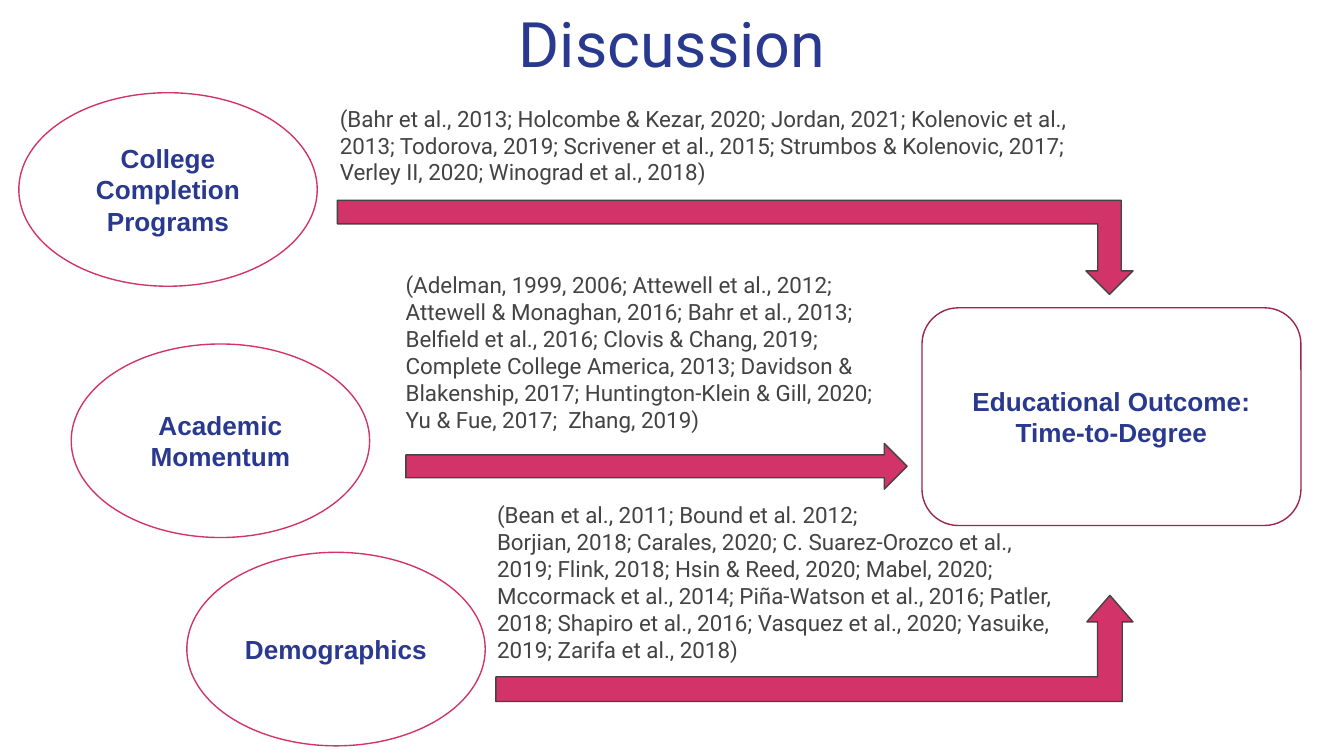
from pptx import Presentation
from pptx.dml.color import RGBColor
from pptx.enum.shapes import MSO_SHAPE
from pptx.enum.text import MSO_ANCHOR, MSO_AUTO_SIZE, PP_ALIGN
from pptx.util import Inches, Pt

NAVY = RGBColor(0x2A, 0x39, 0x90)
PINK = RGBColor(0xD2, 0x33, 0x69)
MAROON = RGBColor(0x9C, 0x25, 0x4D)
GRAY = RGBColor(0x43, 0x43, 0x43)
WHITE = RGBColor(0xFF, 0xFF, 0xFF)
OVAL = MSO_SHAPE.OVAL
ROUNDED = MSO_SHAPE.ROUNDED_RECTANGLE
RIGHT_ARROW = MSO_SHAPE.RIGHT_ARROW
BENT_ARROW = MSO_SHAPE.BENT_UP_ARROW
CENTER, LEFT = PP_ALIGN.CENTER, PP_ALIGN.LEFT
MIDDLE, TOP = MSO_ANCHOR.MIDDLE, MSO_ANCHOR.TOP
NO_AUTOFIT = MSO_AUTO_SIZE.NONE


def add_outlined(kind, box, fill, line):
    shape = slide.shapes.add_shape(kind, *[Inches(v) for v in box])
    shape.shadow.inherit = False
    shape.fill.solid()
    shape.fill.fore_color.rgb = fill
    shape.line.color.rgb = line
    shape.line.width = Pt(0.75)
    return shape


def write(shape, lines, font, size, color, align, anchor, bold=False):
    frame = shape.text_frame
    frame.word_wrap = True
    frame.auto_size = NO_AUTOFIT
    frame.vertical_anchor = anchor
    frame.margin_left = frame.margin_right = Inches(0.1)
    frame.margin_top = frame.margin_bottom = Inches(0.1)
    for i, line in enumerate(lines):
        paragraph = frame.add_paragraph() if i else frame.paragraphs[0]
        paragraph.alignment = align
        run = paragraph.add_run()
        run.text = line
        run.font.name = font
        run.font.size = Pt(size)
        run.font.bold = bold
        run.font.color.rgb = color


# Widescreen slide, 16:9
prs = Presentation()
prs.slide_width = Inches(10)
prs.slide_height = Inches(10 * 9 / 16)
slide = prs.slides.add_slide(prs.slide_layouts[5])

# Title
title = slide.shapes.title
title.left, title.top = Inches(1.72), Inches(0.04)
title.width, title.height = Inches(6.56), Inches(0.65)
write(title, ["Discussion"], "Roboto", 33.6, NAVY, CENTER, MIDDLE)
title.text_frame.paragraphs[0].line_spacing = 0.8

# Factors
factors = [
    ("College Completion Programs", 0.14, 0.69),
    ("Academic Momentum", 0.53, 2.56),
    ("Demographics", 1.39, 4.11),
]
for name, left, top in factors:
    factor = add_outlined(OVAL, (left, top, 2.22, 1.44), WHITE, PINK)
    write(factor, [name], "Arial", 14, NAVY, CENTER, MIDDLE, bold=True)

# Outcome
outcome = add_outlined(ROUNDED, (6.86, 2.29, 2.82, 1.62), WHITE, MAROON)
outcome.adjustments[0] = 0.167
write(outcome, ["Educational Outcome:", "Time-to-Degree"],
      "Arial", 14, NAVY, CENTER, MIDDLE, bold=True)

# Arrows from the factors to the outcome
arrows = [
    (BENT_ARROW, (3.69, 4.43, 4.74, 0.79), (0.233, 0.217, 0.25), False),
    (RIGHT_ARROW, (3.02, 3.3, 3.73, 0.34), (0.5, 0.5), False),
    (BENT_ARROW, (2.51, 1.49, 5.92, 0.7), (0.25, 0.25, 0.25), True),
]
for kind, box, adjustments, points_down in arrows:
    arrow = add_outlined(kind, box, PINK, GRAY)
    for i, value in enumerate(adjustments):
        arrow.adjustments[i] = value
    if points_down:
        arrow.rotation = 180
        arrow._element.spPr.xfrm.set("flipH", "1")

# Citations above each arrow
citations = [
    ((2.43, 0.68, 5.92, 0.81), [
        "(Bahr et al., 2013; Holcombe & Kezar, 2020; Jordan, 2021; "
        "Kolenovic et al., 2013; Todorova, 2019; Scrivener et al., 2015; "
        "Strumbos & Kolenovic, 2017; Verley II, 2020; Winograd et al., 2018)"]),
    ((2.92, 1.92, 3.84, 1.41), [
        "(Adelman, 1999, 2006; Attewell et al., 2012; "
        "Attewell & Monaghan, 2016; Bahr et al., 2013;  "
        "Belfield et al., 2016; Clovis & Chang, 2019; "
        "Complete College America, 2013; Davidson & Blakenship, 2017; "
        "Huntington-Klein & Gill, 2020; Yu & Fue, 2017;  Zhang, 2019)"]),
    ((3.6, 3.63, 4.45, 1.41), [
        "(Bean et al., 2011; Bound et al. 2012;",
        "Borjian, 2018; Carales, 2020; C. Suarez-Orozco et al., 2019; "
        "Flink, 2018; Hsin & Reed, 2020; Mabel, 2020; "
        "Mccormack et al., 2014; Piña-Watson et al., 2016; Patler, 2018; "
        "Shapiro et al., 2016; Vasquez et al., 2020; Yasuike, 2019; "
        "Zarifa et al., 2018)"]),
]
for box, lines in citations:
    citation = slide.shapes.add_textbox(*[Inches(v) for v in box])
    write(citation, lines, "Roboto", 12, GRAY, LEFT, TOP)

prs.save("out.pptx")
